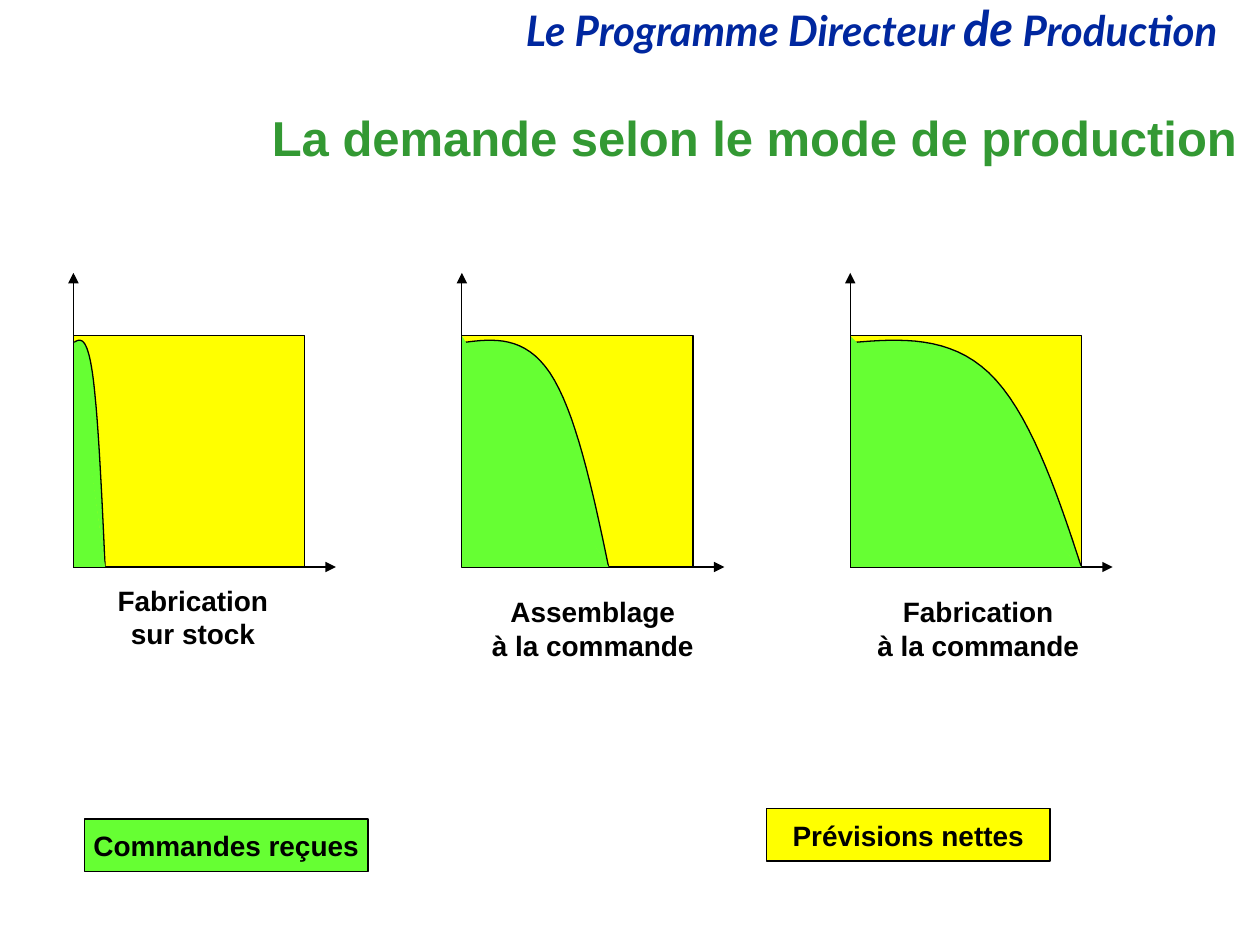
from lxml import etree
from pptx import Presentation
from pptx import util as u
from pptx.dml.color import RGBColor
from pptx.enum import shapes, text
from pptx.oxml.ns import qn

BLACK, YELLOW, GREEN = "000000", "FFFF00", "66FF33"
SIDE, TOP, BASE = 4.66, 6.77, 11.43
AXIS_TOP, AXIS_LENGTH = 5.5, 5.29
FIRST_LEFT, PITCH = 1.48, 7.83
CURVE = [(0, 0.03), (0.22, 0.01), (0.43, 0), (0.6, 0.16),
         (0.77, 0.32), (0.89, 0.66), (1, 1)]
CHARTS = [
    (0.64, "Fabrication\nsur stock", 3.89, 11.63),
    (2.96, "Assemblage\nà la commande", 11.95, 11.86),
    (SIDE, "Fabrication\nà la commande", 19.72, 11.86),
]


def colour(value):
    """Return the colour for a hex string."""
    return RGBColor.from_string(value)


def format_run(run, size, font, value, italic=None):
    """Apply a bold font to a run."""
    run.font.size = u.Pt(size)
    run.font.name = font
    run.font.bold = True
    run.font.italic = italic
    run.font.color.rgb = colour(value)


def write(shape, content, size, value, alignment, wrap):
    """Write and format text in a shape."""
    frame = shape.text_frame
    frame.text = content
    frame.word_wrap = wrap
    for paragraph in frame.paragraphs:
        paragraph.alignment = alignment
        for run in paragraph.runs:
            format_run(run, size, "Arial", value)


def style(shape, fill, outlined=True):
    """Set the fill and outline of a shape."""
    shape.shadow.inherit = False
    shape.fill.solid()
    shape.fill.fore_color.rgb = colour(fill)
    if outlined:
        shape.line.color.rgb = colour(BLACK)
        shape.line.width = u.Pt(0.75)
    else:
        shape.line.fill.background()


def add_preset(container, kind, left, top, width, height, fill, outlined=True):
    """Add a filled preset shape."""
    shape = container.add_shape(kind, u.Cm(left), u.Cm(top), u.Cm(width), u.Cm(height))
    style(shape, fill, outlined)
    return shape


def add_line(container, start, end, arrow=False):
    """Add a thin black line, with an optional arrowhead."""
    line = container.add_connector(
        shapes.MSO_CONNECTOR.STRAIGHT, *(u.Cm(value) for value in (*start, *end)))
    line.line.color.rgb = colour(BLACK)
    line.line.width = u.Pt(0.75)
    properties = line._element.spPr
    if arrow:
        etree.SubElement(properties.find(qn("a:ln")), qn("a:tailEnd"), type="triangle")
    etree.SubElement(properties, qn("a:effectLst"))


def bezier(points, t):
    """Return a point on a cubic curve."""
    weights = ((1 - t) ** 3, 3 * t * (1 - t) ** 2, 3 * t ** 2 * (1 - t), t ** 3)
    return tuple(sum(w * point[axis] for w, point in zip(weights, points))
                 for axis in (0, 1))


def add_orders(slide, left, width):
    """Add the grouped green area under the order curve."""
    group = slide.shapes.add_group_shape().shapes
    steps = 16
    fractions = [CURVE[0]] + [bezier(CURVE[first:first + 4], step / steps)
                              for first in (0, 3) for step in range(1, steps + 1)]
    points = [(u.Cm(left + x * width), u.Cm(TOP + y * SIDE)) for x, y in fractions]
    builder = group.build_freeform(*points[0])
    builder.add_line_segments(points[1:], close=False)
    style(builder.convert_to_shape(), GREEN)
    add_line(group, (left, BASE), (left + width, BASE))
    add_preset(group, shapes.MSO_SHAPE.RIGHT_TRIANGLE,
               left, TOP, width, SIDE, GREEN, outlined=False)
    add_line(group, (left, TOP), (left, BASE))


def add_label(slide, content, centre, top):
    """Add a centred label below a chart."""
    width = 4.6
    box = slide.shapes.add_textbox(
        u.Cm(centre - width / 2), u.Cm(top), u.Cm(width), u.Cm(1.63))
    write(box, content, 16, BLACK, text.PP_ALIGN.CENTER, False)


def add_demand_chart(slide, left, width, label, centre, label_top):
    """Add one demand chart with its axes and label."""
    add_preset(slide.shapes, shapes.MSO_SHAPE.RECTANGLE, left, TOP, SIDE, SIDE, YELLOW)
    add_line(slide.shapes, (left, BASE), (left, AXIS_TOP), arrow=True)
    add_line(slide.shapes, (left, BASE), (left + AXIS_LENGTH, BASE), arrow=True)
    add_orders(slide, left, width)
    add_label(slide, label, centre, label_top)


def add_legend(slide, content, left, top, fill):
    """Add a coloured legend box."""
    box = add_preset(slide.shapes, shapes.MSO_SHAPE.RECTANGLE, left, top, 5.72, 1.06, fill)
    write(box, content, 16, BLACK, text.PP_ALIGN.CENTER, False)
    box.text_frame.vertical_anchor = text.MSO_ANCHOR.MIDDLE


def add_header(slide):
    """Add the course name at the top right."""
    box = slide.shapes.add_textbox(u.Cm(4.27), u.Cm(-0.05), u.Cm(20.52), u.Cm(1.32))
    box.text_frame.word_wrap = True
    paragraph = box.text_frame.paragraphs[0]
    paragraph.alignment = text.PP_ALIGN.RIGHT
    paragraph.line_spacing = 0.9
    for content, size in (("Le Programme Directeur ", 24), ("de", 28), (" Production", 24)):
        run = paragraph.add_run()
        run.text = content
        format_run(run, size, "Lato", "00279F", italic=True)


def set_title(slide, content):
    """Place and format the slide title."""
    title = slide.shapes.title
    title.left, title.top = u.Cm(0.64), u.Cm(1.9)
    title.width, title.height = u.Cm(24.55), u.Cm(1.7)
    write(title, content, 28, "339933", text.PP_ALIGN.RIGHT, True)
    title.text_frame.vertical_anchor = text.MSO_ANCHOR.MIDDLE


def main():
    """Build and save the slide."""
    presentation = Presentation()
    presentation.slide_width, presentation.slide_height = u.Cm(25.4), u.Cm(19.05)
    slide = presentation.slides.add_slide(presentation.slide_layouts[5])
    add_header(slide)
    set_title(slide, "La demande selon le mode de production")
    for index, chart in enumerate(CHARTS):
        add_demand_chart(slide, FIRST_LEFT + index * PITCH, *chart)
    add_legend(slide, "Prévisions nettes", 15.45, 16.3, YELLOW)
    add_legend(slide, "Commandes reçues", 1.7, 16.51, GREEN)
    presentation.save("out.pptx")


if __name__ == "__main__":
    main()
